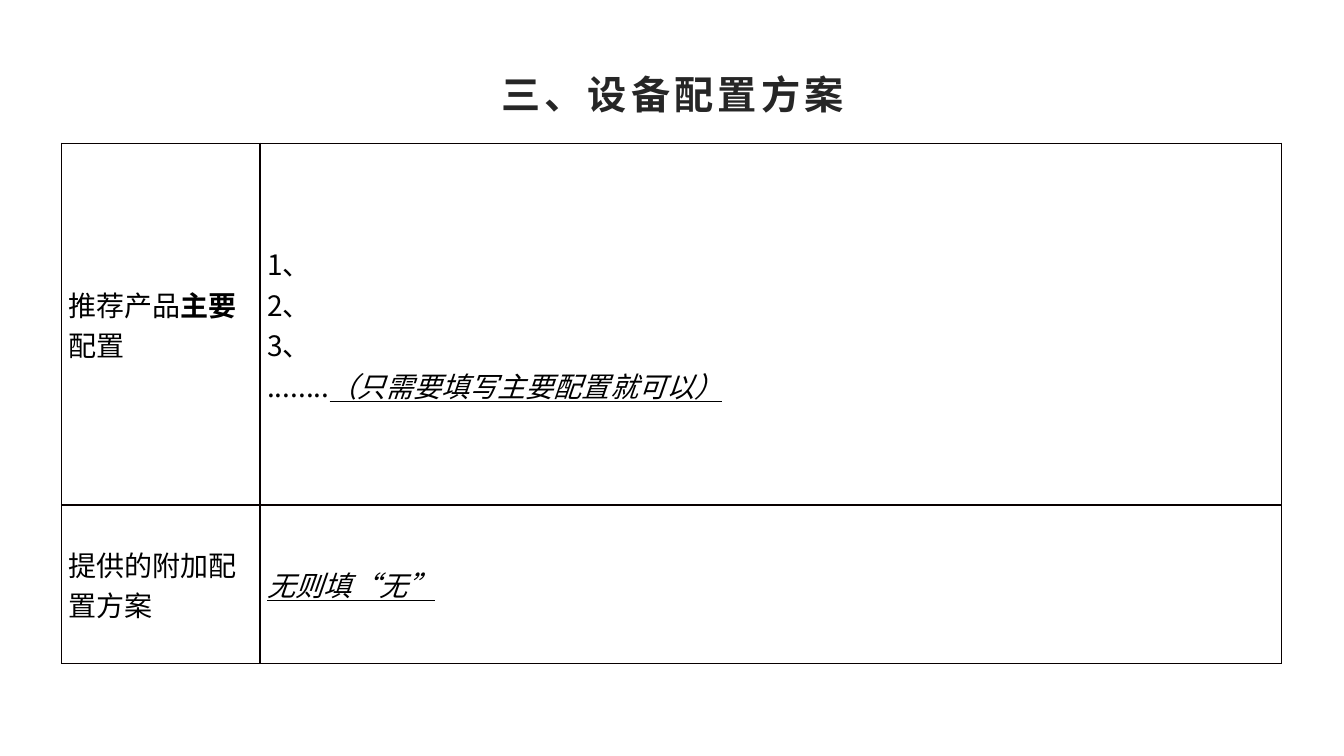
import pptx
import pptx.dml.color
import pptx.enum.text
import pptx.oxml
import pptx.oxml.ns
import pptx.util
from lxml import etree

Inches, Pt = pptx.util.Inches, pptx.util.Pt
RGB = pptx.dml.color.RGBColor.from_string
ANCHOR = pptx.enum.text.MSO_ANCHOR
qn = pptx.oxml.ns.qn

TITLE = "三、设备配置方案"

# A cell is a list of paragraphs, a paragraph a list of (text, style) runs.
ROWS = [
    [
        [[("推荐产品", "label"), ("主要", "strong"), ("配置", "label")]],
        [
            [("1、", "item")],
            [("2、", "item")],
            [("3、", "item")],
            [("........", "item"), ("（只需要填写主要配置就可以）", "hint")],
        ],
    ],
    [
        [[("提供的附加配置方案", "label")]],
        [[("无则填“无”", "hint")]],
    ],
]

THEME = {
    "east_asian": "Noto Sans CJK SC",
    "border": "080000",
    "border_pt": 1,
    "title": dict(font="Arial", size=28, color="262626", bold=True, spacing=3),
    "label": dict(font="Times New Roman", size=20, color="000000"),
    "strong": dict(font="Times New Roman", size=20, color="000000", bold=True),
    "item": dict(font="Noto Sans CJK SC", size=20, color="000000"),
    "hint": dict(font="Calibri", size=20, color="000000", italic=True, underline=True),
}

TITLE_BOX = (2.07, 0.21, 9.2, 1)
TABLE_LEFT, TABLE_TOP = 0.61, 1.42
COL_WIDTHS = [1.97, 10.13]
ROW_HEIGHTS = [3.59, 1.57]
CELL_PAD = 0.07


def add_run(p, text, style):
    look = THEME[style]
    r = p.add_run()
    r.text = text
    r.font.name = look["font"]
    r.font.size = Pt(look["size"])
    r.font.color.rgb = RGB(look["color"])
    r.font.bold = look.get("bold", False)
    r.font.italic = look.get("italic", False)
    r.font.underline = look.get("underline", False)
    rPr = r.font._element
    rPr.set("lang", "zh-CN")
    if "spacing" in look:
        rPr.set("spc", str(look["spacing"] * 100))
    ea = etree.Element(qn("a:ea"), typeface=THEME["east_asian"])
    rPr.find(qn("a:latin")).addnext(ea)


def add_title(s):
    tf = s.shapes.add_textbox(*map(Inches, TITLE_BOX)).text_frame
    tf.word_wrap = True
    tf.vertical_anchor = ANCHOR.BOTTOM
    p = tf.paragraphs[0]
    p.alignment = pptx.enum.text.PP_ALIGN.CENTER
    add_run(p, TITLE, "title")


def set_borders(cell):
    tcPr = cell._tc.get_or_add_tcPr()
    for i, side in enumerate(("a:lnL", "a:lnR", "a:lnT", "a:lnB")):
        ln = etree.Element(qn(side), w=str(Pt(THEME["border_pt"])))
        fill = etree.SubElement(ln, qn("a:solidFill"))
        etree.SubElement(fill, qn("a:srgbClr"), val=THEME["border"])
        tcPr.insert(i, ln)


def fill_cell(cell, paragraphs):
    cell.fill.background()
    set_borders(cell)
    cell.vertical_anchor = ANCHOR.MIDDLE
    cell.margin_left = cell.margin_right = Inches(CELL_PAD)
    cell.margin_top = cell.margin_bottom = 0
    tf = cell.text_frame
    for i, runs in enumerate(paragraphs):
        p = tf.add_paragraph() if i else tf.paragraphs[0]
        for text, style in runs:
            add_run(p, text, style)


def add_config_table(s):
    table = s.shapes.add_table(
        len(ROW_HEIGHTS), len(COL_WIDTHS), Inches(TABLE_LEFT), Inches(TABLE_TOP),
        Inches(sum(COL_WIDTHS)), Inches(sum(ROW_HEIGHTS))).table
    table.first_row = table.horz_banding = False
    for col, width in zip(table.columns, COL_WIDTHS):
        col.width = Inches(width)
    for row, height, contents in zip(table.rows, ROW_HEIGHTS, ROWS):
        row.height = Inches(height)
        for cell, paragraphs in zip(row.cells, contents):
            fill_cell(cell, paragraphs)


def main():
    prs = pptx.Presentation()
    prs.slide_width, prs.slide_height = Inches(13.33), Inches(7.5)
    s = prs.slides.add_slide(prs.slide_layouts[6])
    add_config_table(s)
    add_title(s)
    prs.save("out.pptx")


if __name__ == "__main__":
    main()
